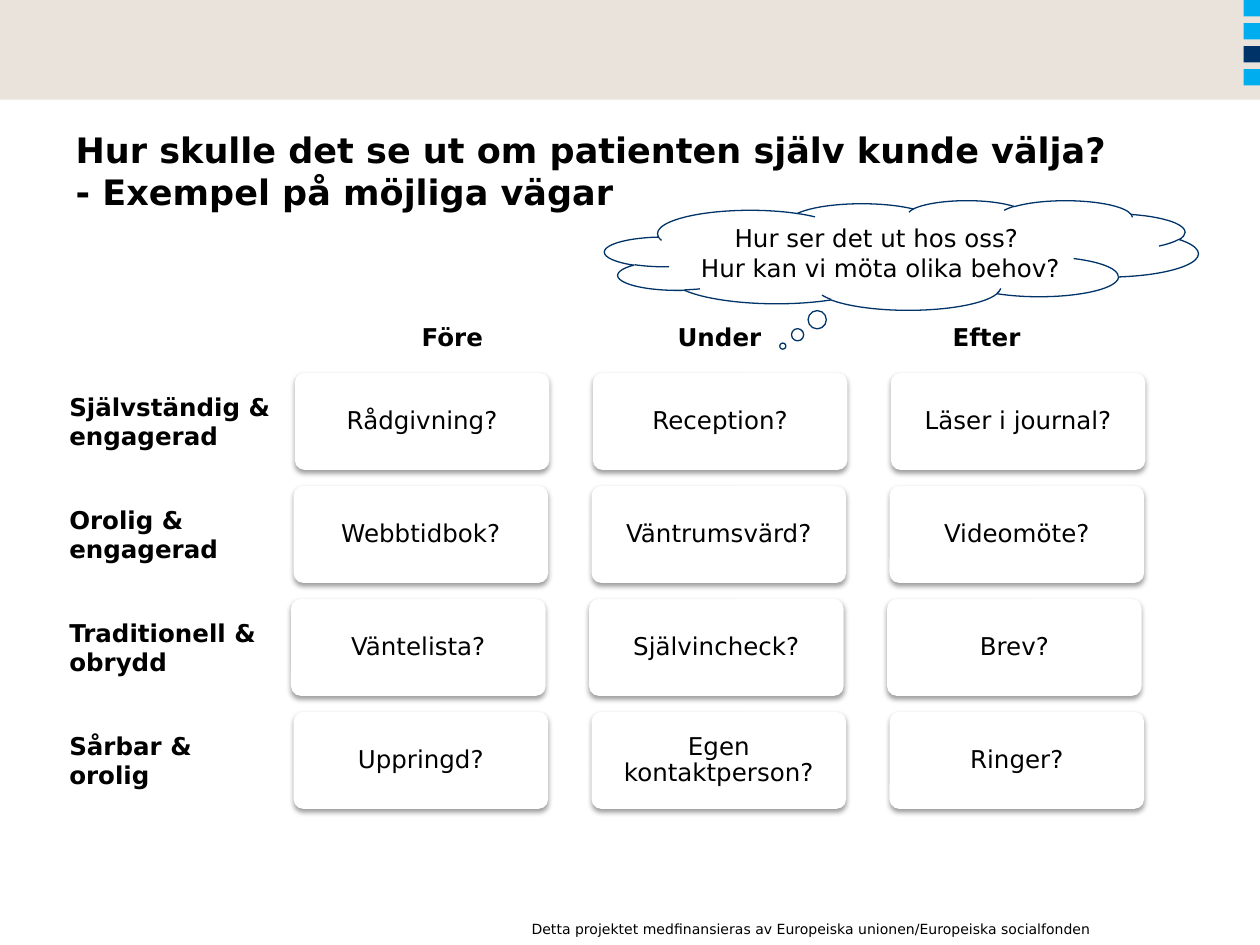
from lxml import etree
from pptx import Presentation
from pptx import util as u
from pptx.dml.color import RGBColor
from pptx.enum import shapes, text
from pptx.oxml.ns import qn

COLORS = {"band": "E9E3DC", "cyan": "00AEEF", "navy": "003468",
          "white": "FFFFFF", "black": "000000"}
FONT = "DejaVu Sans"
WIDTH, HEIGHT = 10, 7.5
CENTER = text.PP_ALIGN.CENTER
HEADINGS = ["Före", "Under", "Efter"]
# Row label, horizontal shift of the row, and its cards
ROWS = [
    ("Självständig & engagerad", 0,
     ["Rådgivning?", "Reception?", "Läser i journal?"]),
    ("Orolig & \vengagerad", -0.01,
     ["Webbtidbok?", "Väntrumsvärd?", "Videomöte?"]),
    ("Traditionell & obrydd", -0.03,
     ["Väntelista?", "Självincheck?", "Brev?"]),
    ("Sårbar &\norolig", -0.01,
     ["Uppringd?", "Egen kontaktperson?", "Ringer?"]),
]


def color(name):
    return RGBColor.from_string(COLORS[name])


def inches(box):
    return [u.Inches(value) for value in box]


def write(shape, words, size=14, bold=False, align=text.PP_ALIGN.LEFT,
          anchor=text.MSO_ANCHOR.TOP, inset=(0.1, 0.05), spacing=None):
    frame = shape.text_frame
    side, end = inches(inset)
    frame_format = {"word_wrap": True, "auto_size": text.MSO_AUTO_SIZE.NONE,
                    "vertical_anchor": anchor,
                    "margin_left": side, "margin_right": side,
                    "margin_top": end, "margin_bottom": end}
    for name, value in frame_format.items():
        setattr(frame, name, value)
    frame.text = words
    font_format = {"name": FONT, "size": u.Pt(size), "bold": bold}
    for para in frame.paragraphs:
        para.alignment = align
        para.line_spacing = spacing
        for span in para.runs:
            for name, value in font_format.items():
                setattr(span.font, name, value)
            span.font.color.rgb = color("black")


def add_label(page, box, words, **style):
    write(page.shapes.add_textbox(*inches(box)), words, **style)


def add_block(page, kind, box, fill, line=None):
    shape = page.shapes.add_shape(kind, *inches(box))
    shape.shadow.inherit = False
    shape.fill.solid()
    shape.fill.fore_color.rgb = color(fill)
    if line:
        shape.line.color.rgb = color(line)
        shape.line.width = u.Pt(0.75)
    else:
        shape.line.fill.background()
    return shape


def add_soft_shadow(shape):
    effects = shape._element.spPr.find(qn("a:effectLst"))
    shadow = etree.SubElement(effects, qn("a:outerShdw"), {
        "blurRad": str(u.Pt(3.1)), "dist": str(u.Pt(1.6)),
        "dir": "5400000", "rotWithShape": "0"})
    tint = etree.SubElement(shadow, qn("a:srgbClr"), val=COLORS["black"])
    etree.SubElement(tint, qn("a:alpha"), val="38000")


def add_banner(page, box):
    """Header band with a column of small squares at its right edge."""
    left, top, width, height = box
    rectangle = shapes.MSO_SHAPE.RECTANGLE
    add_block(page, rectangle, box, "band")
    side, pitch = 0.13, 0.183
    for index, fill in enumerate(["cyan", "cyan", "navy", "cyan"]):
        square = (left + width - side, top + index * pitch, side, side)
        add_block(page, rectangle, square, fill)


def add_title(page, box):
    title = page.shapes.title
    title.left, title.top, title.width, title.height = inches(box)
    write(title, "Hur skulle det se ut om patienten själv kunde välja?"
                 "\v- Exempel på möjliga vägar", size=20, bold=True)


def add_headings(page, box):
    left, top, width, height = box
    column = width / len(HEADINGS)
    for index, heading in enumerate(HEADINGS):
        add_label(page, (left + index * column, top, column, height), heading,
                  bold=True, align=CENTER, inset=(0.05, 0.05))


def add_card(page, box, words):
    card = add_block(page, shapes.MSO_SHAPE.ROUNDED_RECTANGLE, box, "white")
    card.adjustments[0] = 0.1
    add_soft_shadow(card)
    write(card, words, align=CENTER, anchor=text.MSO_ANCHOR.MIDDLE,
          inset=(0.08, 0.08), spacing=0.9)


def add_paths(page, box, label_left):
    """Grid of cards filling the box, each row with its label to the left."""
    left, top, width, height = box
    card_width, card_height = 2.02, 0.77
    column = (width - card_width) / (len(HEADINGS) - 1)
    row = (height - card_height) / (len(ROWS) - 1)
    for line, (label, shift, cards) in enumerate(ROWS):
        y = top + line * row
        add_label(page, (label_left, y + 0.1, 1.94, 0.57), label,
                  bold=True, inset=(0.05, 0.05))
        for index, words in enumerate(cards):
            x = left + shift + index * column
            add_card(page, (x, y, card_width, card_height), words)


def add_thought(page, box):
    cloud = add_block(page, shapes.MSO_SHAPE.CLOUD_CALLOUT, box,
                      "white", "navy")
    cloud.adjustments[0], cloud.adjustments[1] = -0.2, 0.83
    write(cloud, "Hur ser det ut hos oss? \vHur kan vi möta olika behov?",
          align=CENTER, anchor=text.MSO_ANCHOR.MIDDLE)


def main():
    deck = Presentation()
    deck.slide_width, deck.slide_height = inches((WIDTH, HEIGHT))
    page = deck.slides.add_slide(deck.slide_layouts[5])
    margin = 0.05 * WIDTH
    add_banner(page, (0, 0, WIDTH, 0.79))
    add_label(page, (4.01, 7.26, 4.75, 0.24),
              "Detta projektet medfinansieras av Europeiska unionen/"
              "Europeiska socialfonden", size=8, align=text.PP_ALIGN.RIGHT)
    add_title(page, (margin, 0.97, WIDTH - 2 * margin, 1.25))
    add_headings(page, (2.53, 2.51, 6.36, 0.34))
    add_paths(page, (2.34, 2.96, 6.75, 3.46), margin)
    add_thought(page, (4.8, 1.59, 4.71, 0.87))
    deck.save("out.pptx")


if __name__ == "__main__":
    main()
